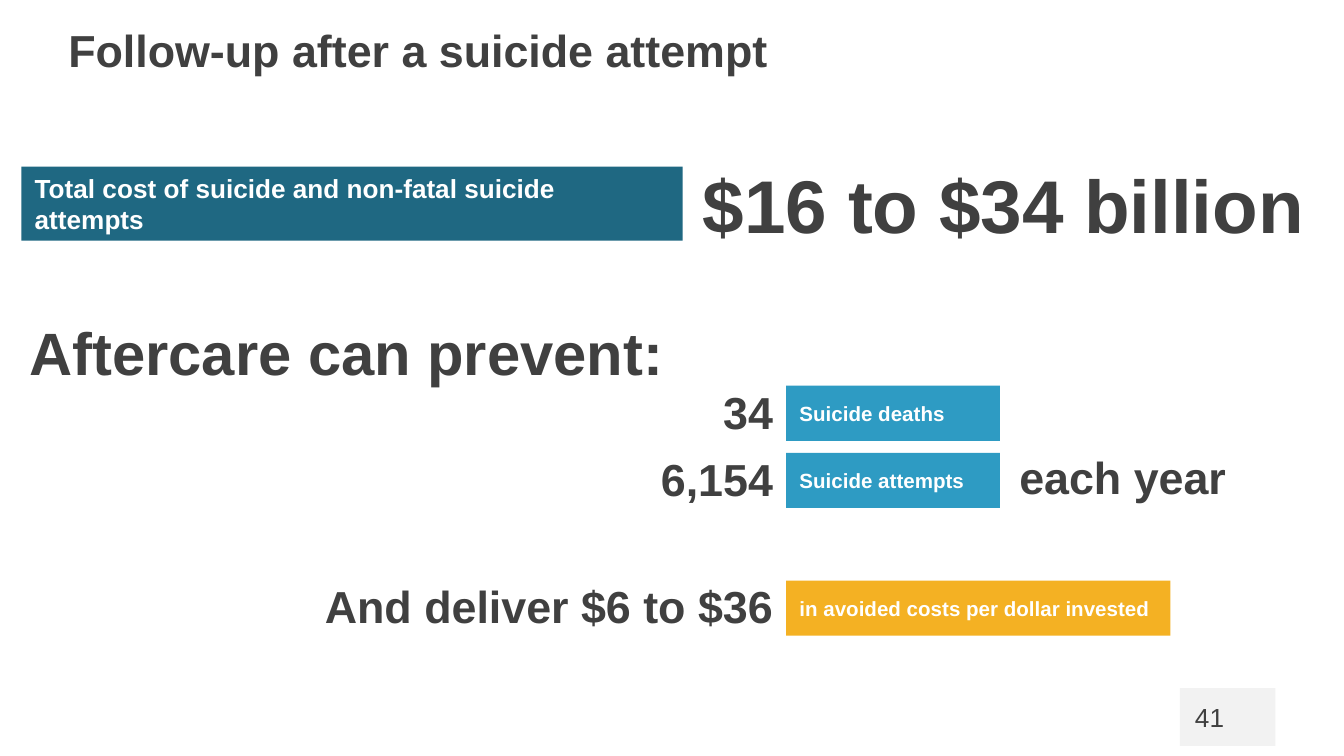
from dataclasses import dataclass

from pptx import Presentation
from pptx.dml.color import RGBColor
from pptx.enum.shapes import MSO_SHAPE
from pptx.enum.text import MSO_ANCHOR, MSO_AUTO_SIZE, PP_ALIGN
from pptx.util import Emu, Pt

LEFT, CENTER, RIGHT = PP_ALIGN.LEFT, PP_ALIGN.CENTER, PP_ALIGN.RIGHT
RECTANGLE = MSO_SHAPE.RECTANGLE
TOP, MIDDLE = MSO_ANCHOR.TOP, MSO_ANCHOR.MIDDLE
FIT_SHAPE, NO_FIT = MSO_AUTO_SIZE.SHAPE_TO_FIT_TEXT, MSO_AUTO_SIZE.NONE


@dataclass(frozen=True)
class Theme:
    font: str = "Arial"
    ink: str = "404040"
    white: str = "FFFFFF"
    grey: str = "F2F2F2"
    teal: str = "1F6882"
    blue: str = "2E9BC3"
    amber: str = "F4B123"
    small: int = 11
    body: int = 14
    heading: int = 24
    lead: int = 32
    headline: int = 40


THEME = Theme()
EMU_PER_PX = 9144  # 100 px to the inch
SLIDE_WIDTH = 1000
SLIDE_HEIGHT = SLIDE_WIDTH * 9 / 16

# Text, box (left, top, width, height), type size, alignment
STATEMENTS = [
    ("Follow-up after a suicide attempt", (41, 12, 545, 50), THEME.heading, LEFT),
    ("$16 to $34 billion", (508, 113, 472, 77), THEME.headline, RIGHT),
    ("Aftercare can prevent:", (8, 230, 496, 64), THEME.lead, RIGHT),
]
TOTAL_COST = ("Total cost of suicide and non-fatal suicide attempts", (16, 124, 492, 55))
FREQUENCY = ("each year", (743, 330, 179, 50))

# Figure, figure width, bar label, bar top, bar width, bar colour
OUTCOMES = [
    ("34", 58, "Suicide deaths", 287, 159, THEME.blue),
    ("6,154", 105, "Suicide attempts", 337, 159, THEME.blue),
    ("And deliver $6 to $36", 357, "in avoided costs per dollar invested", 432, 286, THEME.amber),
]
BAR_LEFT, BAR_HEIGHT, FIGURE_HEIGHT = 585, 41, 50
FIGURE_RISE = 6

PAGE_NUMBER = "41"
PAGE_PANEL = (878, 512, 71, 43)
PAGE_BOX = (878, 512, 44, 43)
PAGE_INSET = 10


def px(value):
    return Emu(round(value * EMU_PER_PX))


def write(shape, text, size, color, align=LEFT, anchor=TOP, bold=True, wrap=False, fit=FIT_SHAPE):
    frame = shape.text_frame
    frame.word_wrap = wrap
    frame.auto_size = fit
    frame.vertical_anchor = anchor
    paragraph = frame.paragraphs[0]
    paragraph.alignment = align
    run = paragraph.add_run()
    run.text = text
    run.font.name = THEME.font
    run.font.size = Pt(size)
    run.font.bold = bold
    run.font.color.rgb = RGBColor.from_string(color)


def add_statement(slide, text, box, size, align, wrap=False):
    write(slide.shapes.add_textbox(*map(px, box)), text, size, THEME.ink, align, wrap=wrap)


def add_panel(slide, box, color):
    panel = slide.shapes.add_shape(RECTANGLE, *map(px, box))
    panel.shadow.inherit = False
    panel.fill.solid()
    panel.fill.fore_color.rgb = RGBColor.from_string(color)
    panel.line.fill.background()
    return panel


def add_bar(slide, text, box, size, color):
    write(add_panel(slide, box, color), text, size, THEME.white,
          anchor=MIDDLE, wrap=True, fit=NO_FIT)


def add_page_number(slide):
    add_panel(slide, PAGE_PANEL, THEME.grey)
    number = add_panel(slide, PAGE_BOX, THEME.grey)
    frame = number.text_frame
    frame.margin_left = frame.margin_right = px(PAGE_INSET)
    frame.margin_top = frame.margin_bottom = px(PAGE_INSET)
    write(number, PAGE_NUMBER, THEME.body, THEME.ink, CENTER, MIDDLE, bold=False)


def main():
    deck = Presentation()
    deck.slide_width, deck.slide_height = px(SLIDE_WIDTH), px(SLIDE_HEIGHT)
    slide = deck.slides.add_slide(deck.slide_layouts[6])

    add_page_number(slide)
    add_bar(slide, *TOTAL_COST, THEME.body, THEME.teal)
    for statement in STATEMENTS:
        add_statement(slide, *statement)

    for figure, figure_width, label, top, bar_width, color in OUTCOMES:
        add_bar(slide, label, (BAR_LEFT, top, bar_width, BAR_HEIGHT), THEME.small, color)
        figure_box = (BAR_LEFT - figure_width, top - FIGURE_RISE, figure_width, FIGURE_HEIGHT)
        add_statement(slide, figure, figure_box, THEME.heading, RIGHT)
    add_statement(slide, *FREQUENCY, THEME.heading, RIGHT, wrap=True)

    deck.save("out.pptx")


if __name__ == "__main__":
    main()
